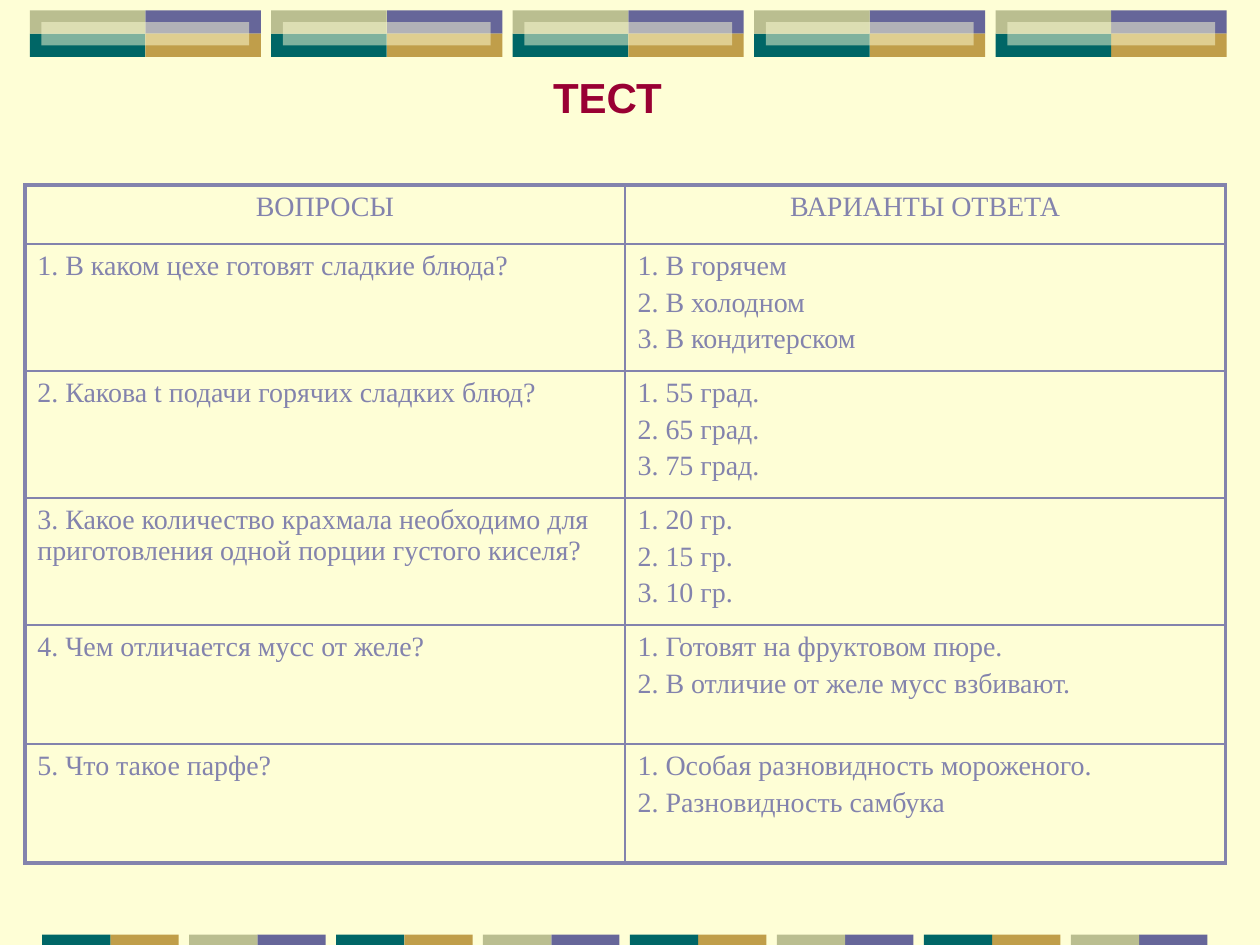
from lxml.etree import SubElement
from pptx import Presentation
from pptx.dml.color import RGBColor
from pptx.enum.shapes import MSO_SHAPE
from pptx.enum.text import PP_ALIGN
from pptx.oxml import parse_xml
from pptx.oxml.ns import nsdecls, qn
from pptx.util import Cm, Pt

CREAM, INK, TITLE_RED = "FEFED6", "8383AD", "990033"
OLIVE, VIOLET, TEAL, GOLD = "BABE90", "666699", "006666", "C09E4A"

HEADINGS = ["ВОПРОСЫ", "ВАРИАНТЫ ОТВЕТА"]
QUESTIONS = [
    ("1. В каком цехе готовят сладкие блюда?",
     ["1. В горячем", "2. В холодном", "3. В кондитерском"]),
    ("2. Какова t подачи горячих сладких блюд?",
     ["1. 55 град.", "2. 65 град.", "3. 75 град."]),
    ("3. Какое количество крахмала необходимо для приготовления одной порции густого киселя?",
     ["1. 20 гр.", "2. 15 гр.", "3. 10 гр."]),
    ("4. Чем отличается мусс от желе?",
     ["1. Готовят на фруктовом пюре.", "2. В отличие от желе мусс взбивают."]),
    ("5. Что такое парфе?",
     ["1. Особая разновидность мороженого.", "2. Разновидность самбука"]),
]


def color(hex_string):
    return RGBColor.from_string(hex_string)


def add_block(slide, left, top, width, height, fill, opacity=None):
    block = slide.shapes.add_shape(
        MSO_SHAPE.RECTANGLE, Cm(left), Cm(top), Cm(width), Cm(height))
    block.shadow.inherit = False
    block.fill.solid()
    block.fill.fore_color.rgb = color(fill)
    block.line.fill.background()
    if opacity is not None:
        tint = block._element.spPr.find(qn("a:solidFill"))[0]
        SubElement(tint, qn("a:alpha"), val=str(opacity * 1000))


def add_top_band(slide, left, top, width, height, count=5, gap=0.21):
    """Row of four-colour tiles, each with a translucent bar in its middle."""
    tile = (width - gap * (count - 1)) / count
    half, row = tile / 2, height / 2
    for i in range(count):
        x = left + i * (tile + gap)
        for dx, dy, fill in [(half, 0, VIOLET), (half, row, GOLD),
                             (0, row, TEAL), (0, 0, OLIVE)]:
            add_block(slide, x + dx, top + dy, half, row, fill)
        add_block(slide, x + row / 2, top + row / 2, tile - row, row, CREAM, 50)


def add_bottom_band(slide, left, top, width, height, count=8, gap=0.21):
    """Row of two-colour tiles whose colour pairs alternate."""
    tile = (width - gap * (count - 1)) / count
    for i in range(count):
        x = left + i * (tile + gap)
        first, second = [(TEAL, GOLD), (OLIVE, VIOLET)][i % 2]
        add_block(slide, x + tile / 2, top, tile / 2, height, second)
        add_block(slide, x, top, tile / 2, height, first)


def add_title(slide, left, top, width, height):
    title = slide.shapes.add_textbox(Cm(left), Cm(top), Cm(width), Cm(height))
    title.text_frame.word_wrap = False
    heading = title.text_frame.paragraphs[0]
    heading.text = "ТЕСТ"
    font = heading.runs[0].font
    font.name, font.size, font.bold = "Arial", Pt(24), True
    font.color.rgb = color(TITLE_RED)


def set_borders(cell, widths):
    """Draw the left, right, top and bottom borders with widths in points."""
    properties = cell._tc.get_or_add_tcPr()
    for position, (side, width) in enumerate(zip("LRTB", widths)):
        properties.insert(position, parse_xml(
            f'<a:ln{side} {nsdecls("a")} w="{Pt(width)}"><a:solidFill>'
            f'<a:srgbClr val="{INK}"/></a:solidFill></a:ln{side}>'))


def fill_cell(cell, lines, align):
    cell.fill.background()
    cell.text_frame.text = "\n".join(lines)
    for i, paragraph in enumerate(cell.text_frame.paragraphs):
        paragraph.alignment = align
        if i:
            paragraph.space_before = Pt(3.2)
        font = paragraph.runs[0].font
        font.name, font.size, font.bold = "Times New Roman", Pt(16), False
        font.color.rgb = color(INK)


def add_quiz(slide, left, top, width, row_heights):
    rows = [[[heading] for heading in HEADINGS]]
    rows += [[[question], answers] for question, answers in QUESTIONS]
    quiz = slide.shapes.add_table(
        len(rows), 2, Cm(left), Cm(top), Cm(width), Cm(sum(row_heights))).table
    quiz.first_row = quiz.horz_banding = False
    for column in quiz.columns:
        column.width = Cm(width / 2)
    last = len(rows) - 1
    for r, (row, height) in enumerate(zip(rows, row_heights)):
        quiz.rows[r].height = Cm(height)
        for c, lines in enumerate(row):
            cell = quiz.cell(r, c)
            fill_cell(cell, lines, PP_ALIGN.LEFT if r else PP_ALIGN.CENTER)
            on_outer_edge = (c == 0, c == 1, r == 0, r == last)
            set_borders(cell, [2.25 if edge else 1 for edge in on_outer_edge])


def main():
    presentation = Presentation()
    presentation.slide_width, presentation.slide_height = Cm(25.4), Cm(19.05)
    slide = presentation.slides.add_slide(presentation.slide_layouts[6])
    slide.background.fill.solid()
    slide.background.fill.fore_color.rgb = color(CREAM)
    add_top_band(slide, 0.6, 0.21, 24.13, 0.94)
    add_bottom_band(slide, 0.85, 18.84, 23.49, 0.21)
    add_quiz(slide, 0.5, 3.73, 24.2, [1.19, 2.56, 2.56, 2.56, 2.4, 2.4])
    add_title(slide, 10.9, 1.32, 2.72, 1.27)
    presentation.save("out.pptx")


if __name__ == "__main__":
    main()
